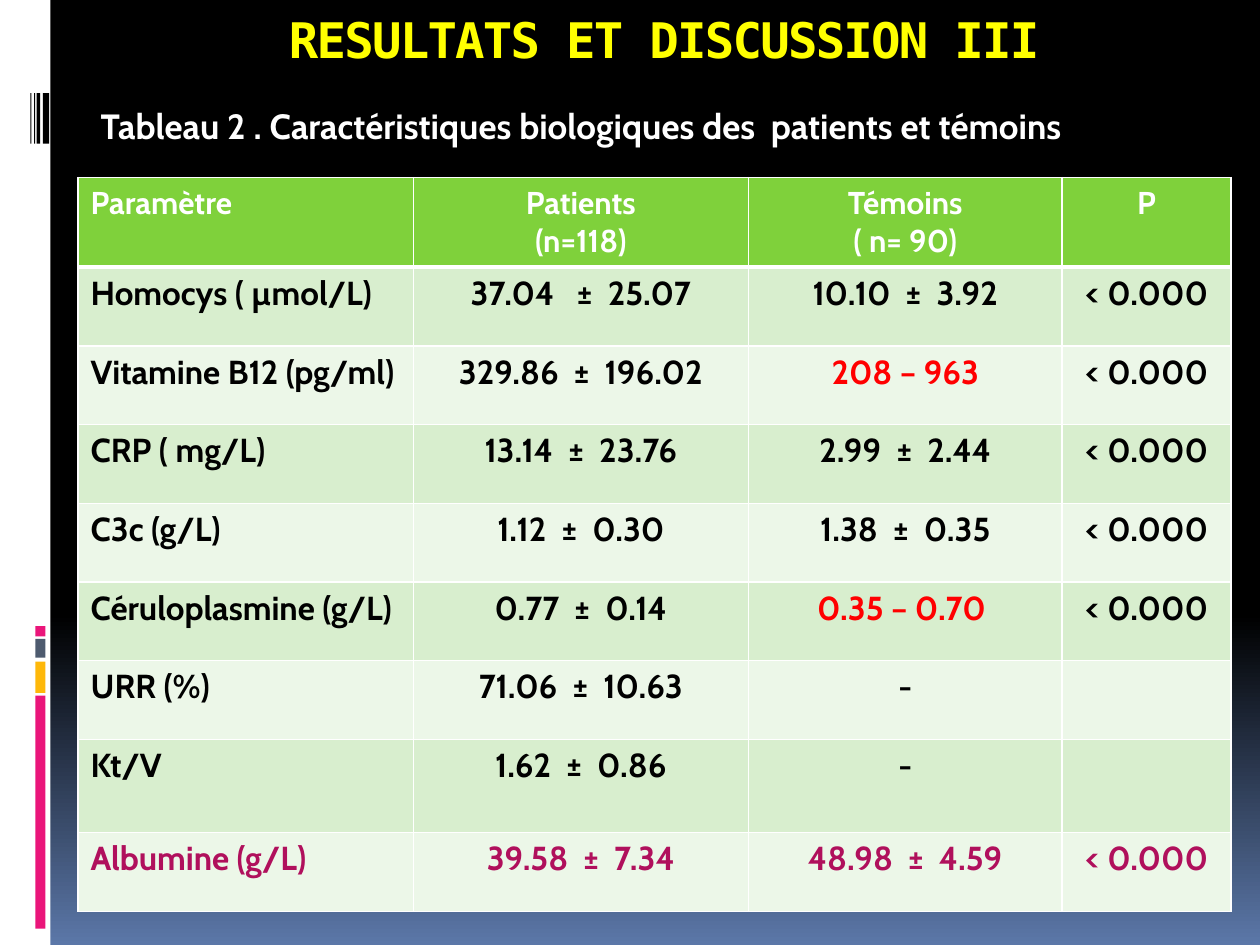
from pptx import Presentation
from pptx.dml.color import RGBColor as RGB
from pptx.enum.shapes import MSO_SHAPE as Shape
from pptx.enum.text import MSO_ANCHOR as Anchor, PP_ALIGN as Align
from pptx.oxml import parse_xml
from pptx.oxml.ns import nsdecls
from pptx.util import Inches, Pt

# Content
TITLE = "RESULTATS ET DISCUSSION III"
CAPTION = "Tableau 2 . Caractéristiques biologiques des  patients et témoins"
HEAD = ["Paramètre", "Patients\n(n=118)", "Témoins\n( n= 90)", "P"]
ROWS = [
    ["Homocys ( µmol/L)", "37.04   ±  25.07", "10.10  ±  3.92", "< 0.000"],
    ["Vitamine B12 (pg/ml)", "329.86  ±  196.02", "208 – 963", "< 0.000"],
    ["CRP ( mg/L)", "13.14  ±  23.76", "2.99  ±  2.44", "< 0.000"],
    ["C3c (g/L)", "1.12  ±  0.30", "1.38  ±  0.35", "< 0.000"],
    ["Céruloplasmine (g/L)", "0.77  ±  0.14", "0.35 – 0.70 ", "< 0.000"],
    ["URR (%)", "71.06  ±  10.63", "-", ""],
    ["Kt/V", "1.62  ±  0.86", "-", ""],
    ["Albumine (g/L)", "39.58  ±  7.34", "48.98  ±  4.59", "< 0.000"],
]
WIDTHS = [2.66, 2.66, 2.49, 1.34]
HEIGHTS = [0.71] + [5 / 8] * 6 + [0.74, 5 / 8]

THEME = {
    "sans": "Cabin", "mono": "DejaVu Sans Mono",
    "title": 28, "caption": 20, "head": 18, "body": 19,
    "white": "FFFFFF", "black": "000000", "yellow": "FFFF00",
    "red": "FF0000", "plum": "B0105C", "sky": "5B77A8",
    "pink": "EA157A", "gold": "FEB80A", "slate": "4E5B6F",
    "green": "7FD13B", "bands": ["D8EECE", "ECF7E8"],
}

# Side strip: left, top, width, height, colour
BARS = [
    (0, 0, 0.4, 7.5, "white"),
    (0.28, 5.52, 0.08, 1.85, "pink"),
    (0.28, 5.25, 0.08, 0.25, "gold"),
    (0.28, 5.07, 0.08, 0.15, "slate"),
    (0.28, 4.97, 0.08, 0.08, "pink"),
] + [(x, 0.74, w, 0.4, "black")
     for x, w in [(0.34, 0.05), (0.29, 0.03), (0.27, 0.01), (0.24, 0.01)]]


def tint(name):
    return RGB.from_string(THEME[name])


def write(frame, text, size, color, align=Align.LEFT, font="sans"):
    for i, line in enumerate(text.split("\n")):
        para = frame.paragraphs[0] if i == 0 else frame.add_paragraph()
        para.alignment = align
        run = para.add_run()
        run.text = line
        run.font.name = THEME[font]
        run.font.size = Pt(THEME[size])
        run.font.bold = True
        run.font.color.rgb = tint(color)


def add_text(slide, box, text, size, color, **style):
    frame = slide.shapes.add_textbox(*map(Inches, box)).text_frame
    frame.word_wrap = True
    frame.vertical_anchor = Anchor.MIDDLE
    write(frame, text, size, color, **style)
    return frame


def edge(cell, top, base):
    sides = [("L", 1), ("R", 1), ("T", top), ("B", base)]
    for i, (side, width) in enumerate(sides):
        cell._tc.get_or_add_tcPr().insert(i, parse_xml(
            f'<a:ln{side} {nsdecls("a")} w="{Pt(width)}"><a:solidFill>'
            f'<a:srgbClr val="{THEME["white"]}"/></a:solidFill></a:ln{side}>'))


def ink(row, text):
    if row == 0:
        return "white"
    if row == len(ROWS):
        return "plum"
    return "red" if "–" in text else "black"


def add_grid(slide):
    data = [HEAD] + ROWS
    grid = slide.shapes.add_table(
        len(data), len(HEAD), Inches(0.62), Inches(1.41),
        Inches(sum(WIDTHS)), Inches(sum(HEIGHTS))).table
    for col, width in zip(grid.columns, WIDTHS):
        col.width = Inches(width)
    for r, (line, height) in enumerate(zip(data, HEIGHTS)):
        grid.rows[r].height = Inches(height)
        for c, text in enumerate(line):
            cell = grid.cell(r, c)
            cell.fill.solid()
            fill = THEME["bands"][(r - 1) % 2] if r else THEME["green"]
            cell.fill.fore_color.rgb = RGB.from_string(fill)
            edge(cell, 3 if r == 1 else 1, 3 if r == 0 else 1)
            if text:
                write(cell.text_frame, text, "body" if r else "head",
                      ink(r, text), Align.CENTER if c else Align.LEFT)


def main():
    deck = Presentation()
    deck.slide_width, deck.slide_height = Inches(10), Inches(7.5)
    slide = deck.slides.add_slide(deck.slide_layouts[6])

    # Background: black down to 65 %, then blue
    back = slide.background.fill
    back.gradient()
    back.gradient_angle = 270
    for stop, (name, place) in zip(back.gradient_stops,
                                   [("black", 0.65), ("sky", 1)]):
        stop.color.rgb = tint(name)
        stop.position = place

    # Side strip
    for *box, name in BARS:
        bar = slide.shapes.add_shape(Shape.RECTANGLE, *map(Inches, box))
        bar.shadow.inherit = False
        bar.fill.solid()
        bar.fill.fore_color.rgb = tint(name)
        bar.line.fill.background()

    # Title, table and caption
    head = add_text(slide, (1.02, 0, 8.5, 0.62), TITLE, "title", "yellow",
                    align=Align.CENTER, font="mono")
    head.paragraphs[0].runs[0].font._element.set("spc", "-100")
    add_grid(slide)
    add_text(slide, (0.7, 0.78, 8.83, 0.44), CAPTION, "caption", "white")

    deck.save("out.pptx")


if __name__ == "__main__":
    main()
